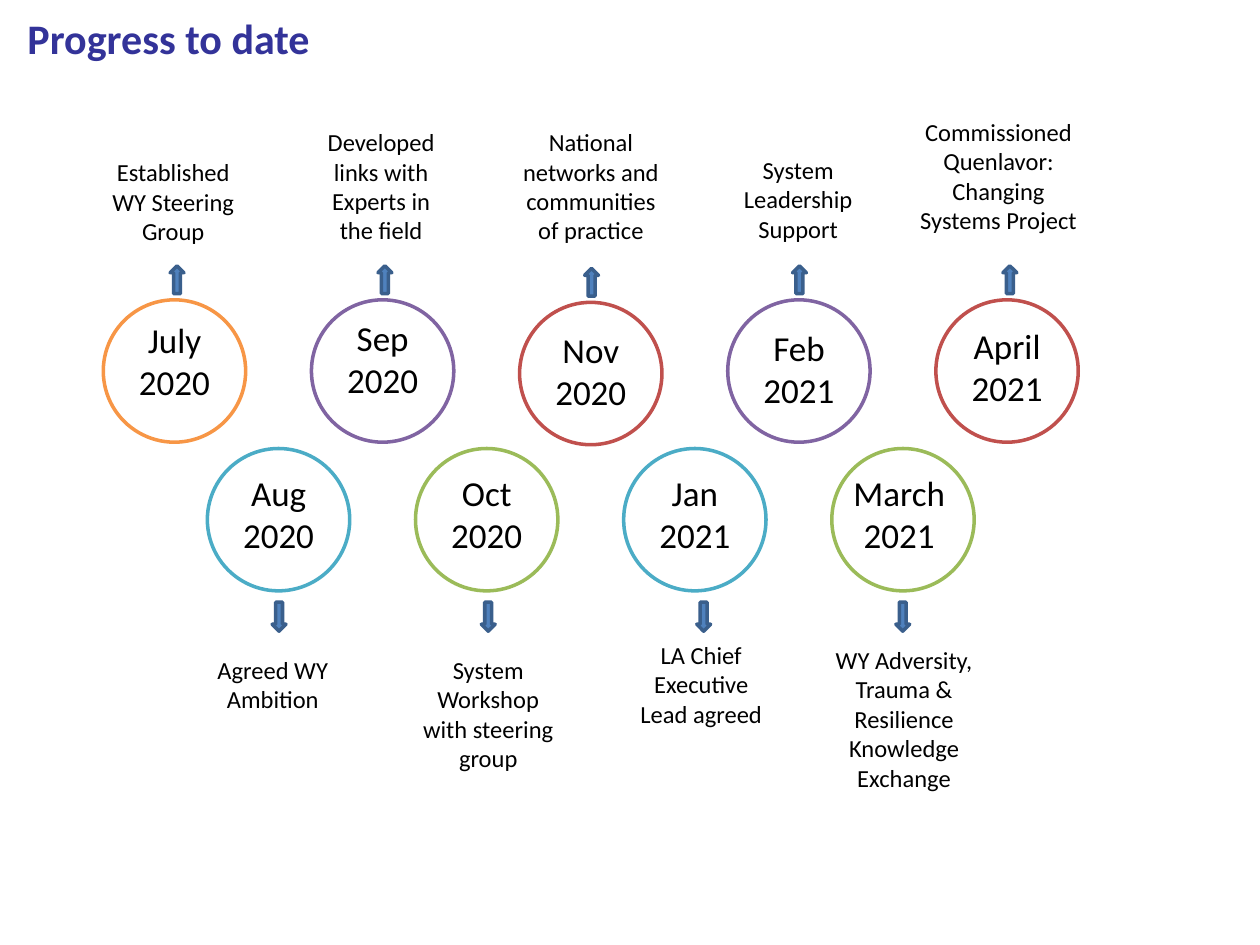
from pptx import Presentation
from pptx.dml.color import RGBColor
from pptx.enum.shapes import MSO_SHAPE
from pptx.enum.text import PP_ALIGN
from pptx.util import Inches, Pt

NAVY = RGBColor(0x33, 0x33, 0x99)
BLACK = RGBColor(0, 0, 0)
WHITE = RGBColor(0xFF, 0xFF, 0xFF)
BLUE = RGBColor(0x4F, 0x81, 0xBD)
STEEL = RGBColor(0x3A, 0x5F, 0x8C)
ORANGE = RGBColor(0xF7, 0x96, 0x46)
TEAL = RGBColor(0x4B, 0xAC, 0xC6)
PURPLE = RGBColor(0x80, 0x64, 0xA2)
GREEN = RGBColor(0x9B, 0xBB, 0x59)
RED = RGBColor(0xC0, 0x50, 0x4D)

FONT = "Calibri"
LEFT, STEP, SIZE = 0.82, 0.826, 1.13

# Month, year, ring colour, ring top, date (top, width, left shift),
# arrow left, note, note box
STAGES = [
    ("July", "2020", ORANGE, 2.38, (2.48, 0.79, 0), 1.35,
     "Established WY Steering Group", (0.75, 1.2, 1.25, 0.81)),
    ("Aug", "2020", TEAL, 3.56, (3.69, 0.79, 0), 2.16,
     "Agreed WY Ambition", (1.54, 5.15, 1.25, 0.57)),
    ("Sep", "2020", PURPLE, 2.38, (2.46, 0.79, 0), 3.0,
     "Developed links with Experts in the field", (2.4, 0.96, 1.25, 1.04)),
    ("Oct", "2020", GREEN, 3.56, (3.69, 0.79, 0), 3.82,
     "System Workshop with steering group", (3.25, 5.15, 1.25, 1.04)),
    ("Nov", "2020", RED, 2.4, (2.56, 0.79, 0), 4.64,
     "National networks and communities of practice",
     (3.98, 0.96, 1.42, 1.04)),
    ("Jan", "2021", TEAL, 3.56, (3.69, 0.79, 0), 5.53,
     "LA Chief Executive Lead agreed", (4.94, 5.03, 1.25, 0.81)),
    ("Feb", "2021", PURPLE, 2.38, (2.54, 0.79, 0), 6.29,
     "System Leadership Support", (5.71, 1.18, 1.25, 0.81)),
    ("March", "2021", GREEN, 3.56, (3.69, 0.98, 0.03), 7.11,
     "WY Adversity, Trauma & Resilience Knowledge Exchange",
     (6.32, 5.07, 1.71, 1.28)),
    ("April", "2021", RED, 2.38, (2.53, 0.79, 0), 7.96,
     "Commissioned Quenlavor: Changing Systems Project",
     (7.17, 0.88, 1.51, 1.04)),
]


def add_text(slide, box, lines, size, color=BLACK, bold=False,
             align=PP_ALIGN.CENTER):
    frame = slide.shapes.add_textbox(*map(Inches, box)).text_frame
    frame.word_wrap = True
    para = frame.paragraphs[0]
    para.alignment = align
    for i, line in enumerate(lines):
        if i:
            para.add_line_break()
        run = para.add_run()
        run.text = line
        run.font.name = FONT
        run.font.size = Pt(size)
        run.font.bold = bold
        run.font.color.rgb = color


def add_form(slide, kind, box, fill, line):
    shape = slide.shapes.add_shape(kind, *map(Inches, box))
    shape.shadow.inherit = False
    shape.fill.solid()
    shape.fill.fore_color.rgb = fill
    shape.line.color.rgb = line
    shape.line.width = Pt(2)


def add_stage(slide, i, stage):
    month, year, color, top, date, tip, note, box = stage
    left = LEFT + i * STEP

    # Ring with its date
    add_form(slide, MSO_SHAPE.OVAL, (left, top, SIZE, SIZE), WHITE, color)
    y, width, shift = date
    x = left + (SIZE - width) / 2 - shift
    add_text(slide, (x, y, width, 0.77), [month, year], 20)

    # Arrow to the note: upper row points up, lower row down
    if i % 2 == 0:
        add_form(slide, MSO_SHAPE.UP_ARROW, (tip, top - 0.27, 0.11, 0.22),
                 BLUE, STEEL)
    else:
        add_form(slide, MSO_SHAPE.DOWN_ARROW, (tip, 4.78, 0.11, 0.23),
                 BLUE, STEEL)
    add_text(slide, box, [note], 14)


def main():
    deck = Presentation()
    deck.slide_width, deck.slide_height = Inches(10), Inches(7.5)
    slide = deck.slides.add_slide(deck.slide_layouts[6])

    # Title
    add_text(slide, (0.12, 0.05, 3.13, 0.5), ["Progress to date"], 24,
             NAVY, True, PP_ALIGN.LEFT)

    # Timeline
    for i, stage in enumerate(STAGES):
        add_stage(slide, i, stage)

    deck.save("out.pptx")


if __name__ == "__main__":
    main()
